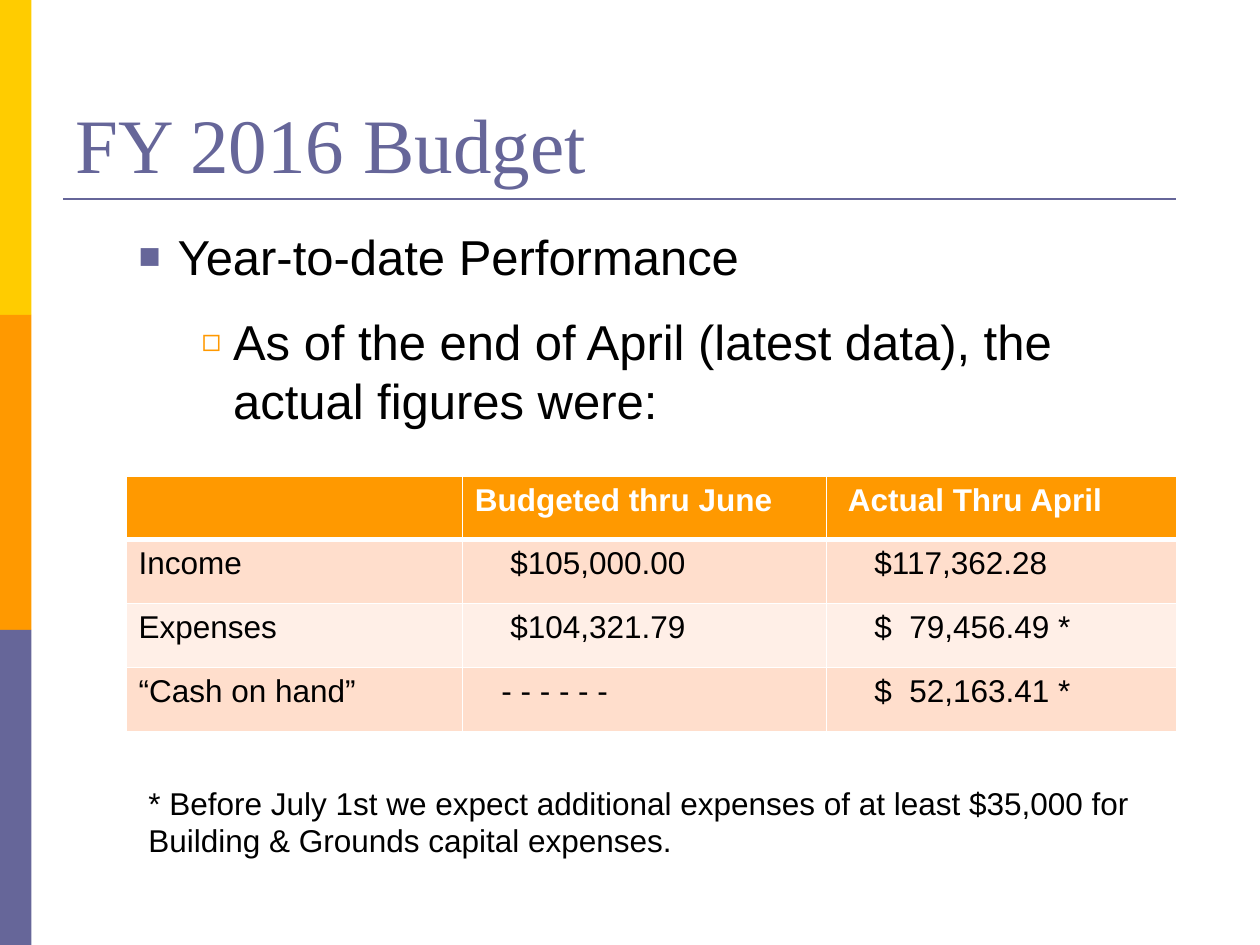
from pptx import Presentation, util as u
from pptx.dml.color import RGBColor
from pptx.enum import shapes, text
from pptx.oxml import parse_xml
from pptx.oxml.ns import nsdecls
from lxml import etree

# Content
TITLE = "FY 2016 Budget"
ITEMS = [  # text, level, left, hanging, space before, bullet, colour, size %
    ("Year-to-date Performance", 0, 0.81, 0.31, 5.6, "■", "666699", 75),
    ("As of the end of April (latest data), the actual figures were:",
     1, 1.25, 0.25, 15, "◻", "FF9900", 65),
]
ROWS = [  # each cell: text, indent in space widths
    [("", 0), ("Budgeted thru June", 0), ("Actual Thru April", 1)],
    [("Income", 0), ("$105,000.00", 4), ("$117,362.28", 4)],
    [("Expenses", 0), ("$104,321.79", 4), ("$  79,456.49 *", 4)],
    [("“Cash on hand”", 0), ("- - - - - -", 3), ("$  52,163.41 *", 4)],
]
NOTE = ("* Before July 1st we expect additional expenses of at least $35,000 "
        "for Building & Grounds capital expenses.")
BARS = ["FFCC00", "FF9900", "666699"]
FILLS = ["FF9900", "FFDECC", "FFEFE7", "FFDECC"]
COLS = [2.67, 2.89, 2.78]
HIGHS = [0.5, 0.51, 0.51, 0.51]
WIDE, HIGH = 10, 7.5
SPACE = 0.07


def rgb(code):
    return RGBColor.from_string(code)


def place(shape, *box):
    shape.left, shape.top, shape.width, shape.height = map(u.Inches, box)


def write(para, words, size, color="000000", font="Arial", bold=False):
    run = para.add_run()
    run.text = words
    run.font.size = u.Pt(size)
    run.font.name = font
    run.font.bold = bold
    run.font.color.rgb = rgb(color)


def bullet(para, left, hang, sign, color, share):
    prop = para._p.get_or_add_pPr()
    prop.set("marL", str(u.Inches(left)))
    prop.set("indent", str(-u.Inches(hang)))
    for tag in (f'<a:buClr {nsdecls("a")}><a:srgbClr val="{color}"/></a:buClr>',
                f'<a:buSzPct {nsdecls("a")} val="{share * 1000}"/>',
                f'<a:buFont {nsdecls("a")} typeface="Arial"/>',
                f'<a:buChar {nsdecls("a")} char="{sign}"/>'):
        prop.append(parse_xml(tag))


def edge(cell, side, width):
    cell._tc.get_or_add_tcPr().append(parse_xml(
        f'<a:ln{side} {nsdecls("a")} w="{u.Pt(width)}"><a:solidFill>'
        f'<a:srgbClr val="FFFFFF"/></a:solidFill></a:ln{side}>'))


deck = Presentation()
deck.slide_width, deck.slide_height = u.Inches(WIDE), u.Inches(HIGH)
slide = deck.slides.add_slide(deck.slide_layouts[1])
parts = slide.shapes

# Side bars
step = HIGH / len(BARS)
for i, color in enumerate(BARS):
    bar = parts.add_shape(shapes.MSO_SHAPE.RECTANGLE, 0, 0, 0, 0)
    place(bar, 0, i * step, WIDE / 40, step)
    bar.shadow.inherit = False
    bar.fill.solid()
    bar.fill.fore_color.rgb = rgb(color)
    bar.line.fill.background()

# Rule under the title
rule = parts.add_connector(shapes.MSO_CONNECTOR.STRAIGHT, u.Inches(0.5),
                           u.Inches(1.58), u.Inches(9.33), u.Inches(1.58))
rule.line.color.rgb = rgb("666699")
rule.line.width = u.Pt(1.5)
etree.SubElement(rule._element.spPr,
                 "{http://schemas.openxmlformats.org/drawingml/2006/main}effectLst")

# Title
title = parts.title
place(title, 0.5, 0.3, 9, 1.25)
frame = title.text_frame
frame.auto_size = text.MSO_AUTO_SIZE.NONE
frame.vertical_anchor = text.MSO_ANCHOR.BOTTOM
frame.paragraphs[0].alignment = text.PP_ALIGN.LEFT
write(frame.paragraphs[0], TITLE, 44, "666699", "Times New Roman")

# Bulleted list
body = slide.placeholders[1]
place(body, 0.5, 1.75, 9, 4.25)
frame = body.text_frame
frame.auto_size = text.MSO_AUTO_SIZE.NONE
for i, (words, level, left, hang, gap, sign, color, share) in enumerate(ITEMS):
    para = frame.add_paragraph() if i else frame.paragraphs[0]
    para.level = level
    para.space_before = u.Pt(gap)
    bullet(para, left, hang, sign, color, share)
    write(para, words, 28)

# Budget table
grid = parts.add_table(len(ROWS), len(COLS), u.Inches(1), u.Inches(3.78),
                       u.Inches(sum(COLS)), u.Inches(sum(HIGHS))).table
for col, width in zip(grid.columns, COLS):
    col.width = u.Inches(width)
for r, (cells, fill) in enumerate(zip(ROWS, FILLS)):
    grid.rows[r].height = u.Inches(HIGHS[r])
    for c, (words, gap) in enumerate(cells):
        cell = grid.cell(r, c)
        cell.margin_left = u.Inches(0.1 + gap * SPACE)
        for side in "LRTB":
            thick = (r, side) in ((0, "B"), (1, "T"))
            edge(cell, side, 3 if thick else 1)
        cell.fill.solid()
        cell.fill.fore_color.rgb = rgb(fill)
        if words:
            write(cell.text_frame.paragraphs[0], words, 18,
                  "000000" if r else "FFFFFF", bold=r == 0)

# Footnote
note = parts.add_textbox(0, 0, 0, 0)
place(note, 1.08, 6.17, 8.33, 0.71)
note.text_frame.word_wrap = True
write(note.text_frame.paragraphs[0], NOTE, 18)

deck.save("out.pptx")
